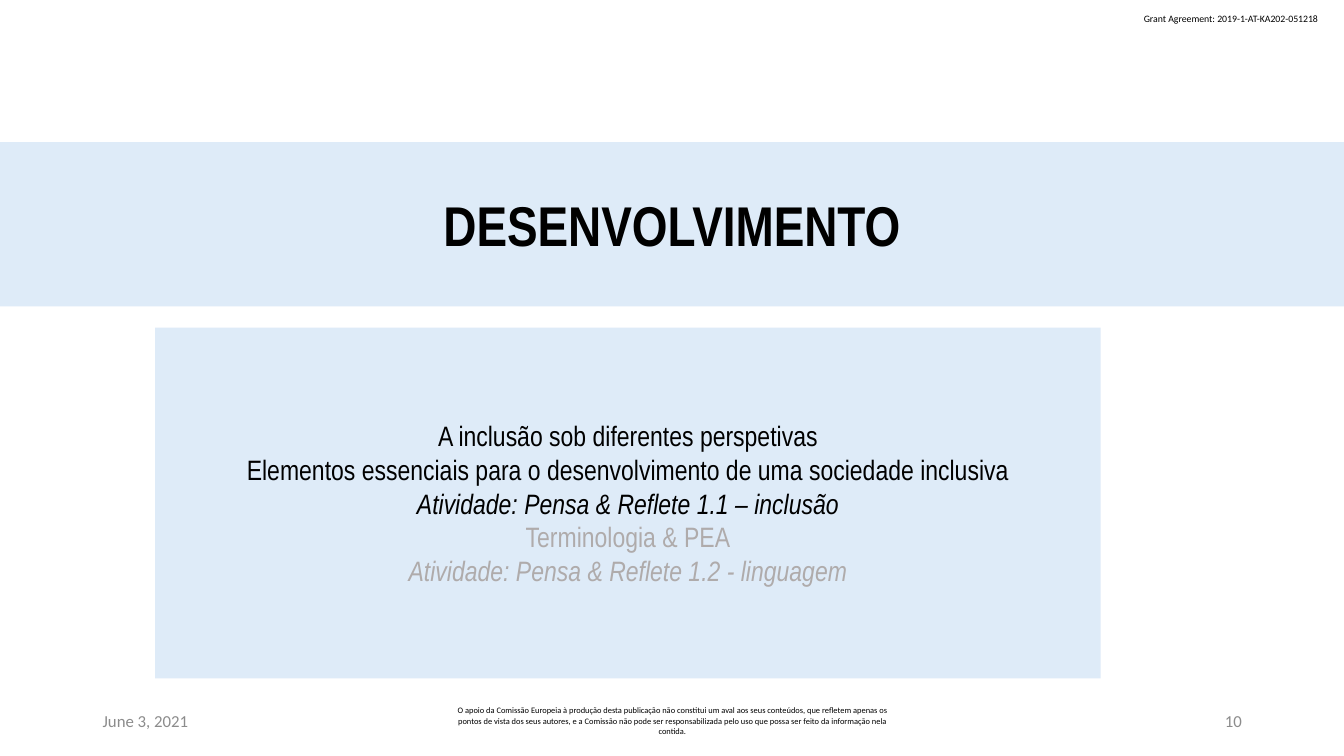
from dataclasses import dataclass

from pptx import Presentation
from pptx.dml.color import RGBColor
from pptx.enum.shapes import MSO_SHAPE
from pptx.enum.text import MSO_ANCHOR, PP_ALIGN
from pptx.slide import Slide
from pptx.text.text import TextFrame
from pptx.util import Pt

BLACK = RGBColor(0x00, 0x00, 0x00)
FOOTER_GREY = RGBColor(0x8C, 0x8C, 0x8C)
INACTIVE_GREY = RGBColor(0xAF, 0xAB, 0xAB)
PALE_BLUE = RGBColor(0xDE, 0xEB, 0xF8)

SLIDE_WIDTH, SLIDE_HEIGHT = 960, 540
FOOTER_TOP, FOOTER_HEIGHT = 500.4, 28.8


@dataclass
class Line:
    text: str
    size: float
    color: RGBColor = BLACK
    font: str = "Calibri"
    bold: bool = False
    italic: bool = False


@dataclass
class Block:
    left: float
    top: float
    width: float
    height: float
    lines: list[Line]
    align: PP_ALIGN = PP_ALIGN.LEFT
    anchor: MSO_ANCHOR = MSO_ANCHOR.MIDDLE
    wrap: bool = True


def write_lines(frame: TextFrame, block: Block) -> None:
    frame.word_wrap = block.wrap
    frame.vertical_anchor = block.anchor
    for index, line in enumerate(block.lines):
        paragraph = frame.add_paragraph() if index else frame.paragraphs[0]
        paragraph.text = line.text
        paragraph.alignment = block.align
        paragraph.font.name = line.font
        paragraph.font.size = Pt(line.size)
        paragraph.font.bold = line.bold
        paragraph.font.italic = line.italic
        paragraph.font.color.rgb = line.color


def add_label(slide: Slide, block: Block) -> None:
    label = slide.shapes.add_textbox(
        Pt(block.left), Pt(block.top), Pt(block.width), Pt(block.height))
    write_lines(label.text_frame, block)


def add_panel(slide: Slide, block: Block) -> None:
    panel = slide.shapes.add_shape(
        MSO_SHAPE.RECTANGLE,
        Pt(block.left), Pt(block.top), Pt(block.width), Pt(block.height))
    panel.shadow.inherit = False
    panel.fill.solid()
    panel.fill.fore_color.rgb = PALE_BLUE
    panel.line.fill.background()
    frame = panel.text_frame
    frame.margin_left = frame.margin_right = Pt(9.6)
    frame.margin_top = frame.margin_bottom = Pt(4.8)
    write_lines(frame, block)


def topic(text: str, color: RGBColor = BLACK, italic: bool = False) -> Line:
    return Line(text, 20, color, "Arial Narrow", italic=italic)


DISCLAIMER = (
    "O apoio da Comissão Europeia à produção desta publicação não constitui "
    "um aval aos seus conteúdos, que refletem apenas os pontos de vista dos "
    "seus autores, e a Comissão não pode ser responsabilizada pelo uso que "
    "possa ser feito da informação nela contida."
)

LABELS = [
    # Grant reference
    Block(810, 5.76, 141.84, 15.84,
          [Line("Grant Agreement: 2019-1-AT-KA202-051218", 7)],
          anchor=MSO_ANCHOR.TOP, wrap=False),
    # Footer: date, disclaimer, page number
    Block(66.24, FOOTER_TOP, 216, FOOTER_HEIGHT,
          [Line("June 3, 2021", 12, FOOTER_GREY)]),
    Block(318.24, FOOTER_TOP, 324, FOOTER_HEIGHT,
          [Line(DISCLAIMER, 6)], PP_ALIGN.CENTER),
    Block(678.24, FOOTER_TOP, 216, FOOTER_HEIGHT,
          [Line("10", 12, FOOTER_GREY)], PP_ALIGN.RIGHT),
]

PANELS = [
    # Section title
    Block(0, 101.52, SLIDE_WIDTH, 117.36,
          [Line("DESENVOLVIMENTO", 40, font="Arial Narrow", bold=True)],
          PP_ALIGN.CENTER),
    # Section topics, with the later ones greyed out
    Block(110.88, 234, 675.36, 250.56, [
        topic("A inclusão sob diferentes perspetivas"),
        topic("Elementos essenciais para o desenvolvimento de uma sociedade inclusiva"),
        topic("Atividade: Pensa & Reflete 1.1 – inclusão", italic=True),
        topic("Terminologia & PEA", INACTIVE_GREY),
        topic("Atividade: Pensa & Reflete 1.2 - linguagem", INACTIVE_GREY, True),
    ], PP_ALIGN.CENTER),
]


def main() -> None:
    deck = Presentation()
    deck.slide_width, deck.slide_height = Pt(SLIDE_WIDTH), Pt(SLIDE_HEIGHT)
    slide = deck.slides.add_slide(deck.slide_layouts[6])
    for label in LABELS:
        add_label(slide, label)
    for panel in PANELS:
        add_panel(slide, panel)
    deck.save("out.pptx")


if __name__ == "__main__":
    main()
